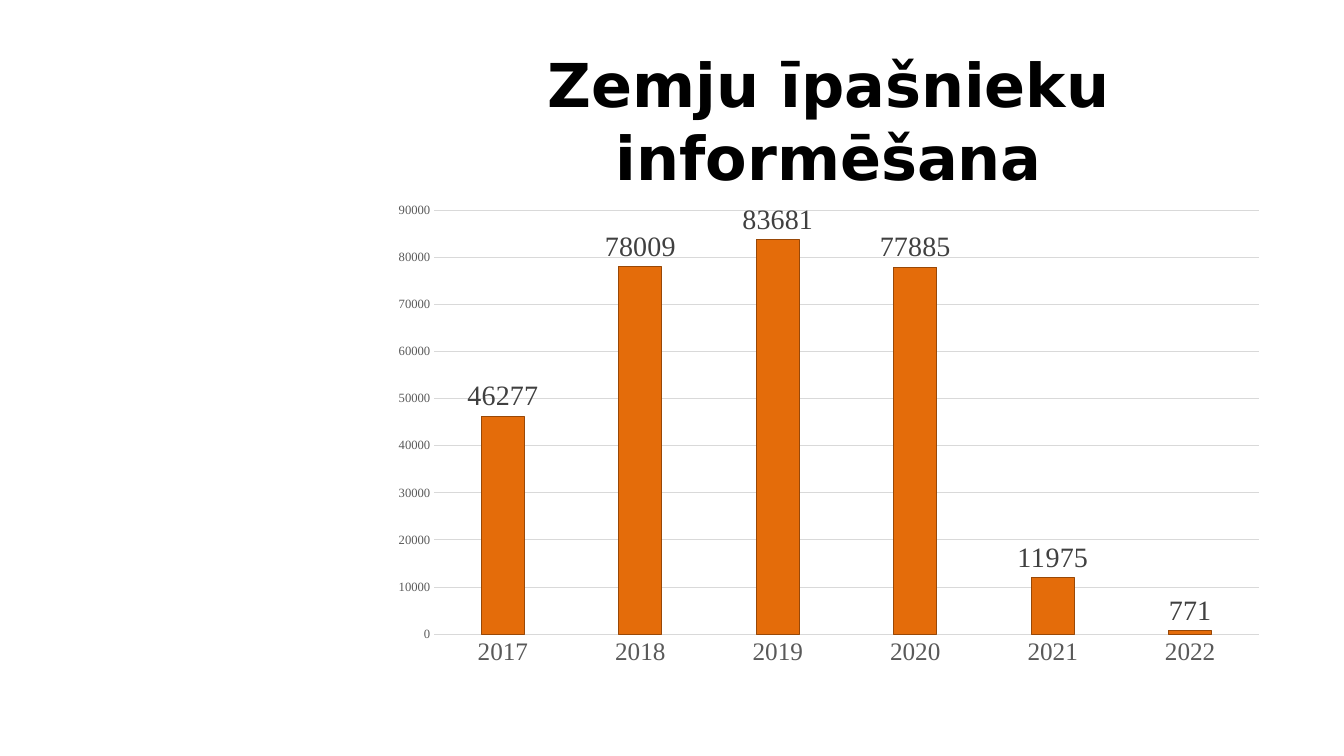
from dataclasses import dataclass

from pptx import Presentation
from pptx.chart.data import CategoryChartData
from pptx.dml.color import RGBColor
from pptx.enum.chart import XL_CHART_TYPE, XL_LABEL_POSITION, XL_TICK_MARK
from pptx.enum.text import MSO_ANCHOR, MSO_AUTO_SIZE, PP_ALIGN
from pptx.util import Inches, Pt


@dataclass(frozen=True)
class Theme:
    title_font: str = "DejaVu Sans"
    chart_font: str = "Times New Roman"
    title_size: float = 43.2
    label_size: int = 20
    category_size: int = 18
    chart_size: int = 10
    value_size: int = 9
    line_width: float = 0.75
    black: str = "000000"
    label: str = "404040"
    axis: str = "595959"
    grid: str = "D9D9D9"
    bar: str = "E46C0A"
    bar_edge: str = "984807"


class SlideBuilder:
    COLUMNS, ROWS = 120, 72

    def __init__(self, prs, theme):
        self.theme = theme
        self.column = prs.slide_width / self.COLUMNS
        self.row = prs.slide_height / self.ROWS
        self.slide = prs.slides.add_slide(prs.slide_layouts[5])

    def box(self, col, row, cols, rows):
        return (int(col * self.column), int(row * self.row),
                int(cols * self.column), int(rows * self.row))

    def style_font(self, font, name, size, color, bold=False):
        font.name = name
        font.size = Pt(size)
        font.bold = bold
        font.color.rgb = RGBColor.from_string(color)

    def style_line(self, line, color):
        line.color.rgb = RGBColor.from_string(color)
        line.width = Pt(self.theme.line_width)

    def title(self, text, *cells):
        t = self.theme
        s = self.slide.shapes.title
        s.left, s.top, s.width, s.height = self.box(*cells)
        tf = s.text_frame
        tf.word_wrap = True
        tf.auto_size = MSO_AUTO_SIZE.NONE
        tf.vertical_anchor = MSO_ANCHOR.TOP
        tf.margin_left = tf.margin_right = Inches(0.1)
        tf.margin_top = tf.margin_bottom = Inches(0.05)
        p = tf.paragraphs[0]
        p.alignment = PP_ALIGN.CENTER
        r = p.add_run()
        r.text = text
        self.style_font(r.font, t.title_font, t.title_size, t.black, True)

    def axis(self, axis, size):
        axis.major_tick_mark = axis.minor_tick_mark = XL_TICK_MARK.NONE
        self.style_font(axis.tick_labels.font, self.theme.chart_font, size, self.theme.axis)

    def column_chart(self, name, values, top, step, *cells):
        t = self.theme
        data = CategoryChartData()
        data.categories = list(values)
        data.add_series(name, list(values.values()))
        chart = self.slide.shapes.add_chart(
            XL_CHART_TYPE.COLUMN_CLUSTERED, *self.box(*cells), data).chart
        chart.has_legend = chart.has_title = False
        self.style_font(chart.font, t.chart_font, t.chart_size, t.black)

        self.axis(chart.category_axis, t.category_size)
        self.style_line(chart.category_axis.format.line, t.grid)
        axis = chart.value_axis
        self.axis(axis, t.value_size)
        axis.format.line.fill.background()
        axis.minimum_scale, axis.maximum_scale, axis.major_unit = 0, top, step
        self.style_line(axis.major_gridlines.format.line, t.grid)

        plot = chart.plots[0]
        plot.gap_width, plot.overlap = 219, -27
        plot.vary_by_categories = False
        series = plot.series[0]
        series.format.fill.solid()
        series.format.fill.fore_color.rgb = RGBColor.from_string(t.bar)
        self.style_line(series.format.line, t.bar_edge)
        labels = series.data_labels
        labels.show_value = True
        labels.position = XL_LABEL_POSITION.OUTSIDE_END
        self.style_font(labels.font, t.chart_font, t.label_size, t.label)


def main():
    prs = Presentation()
    prs.slide_width, prs.slide_height = Inches(13.33), Inches(7.5)
    page = SlideBuilder(prs, Theme())
    page.title("Zemju īpašnieku informēšana", 34, 4, 80, 10.85)
    informed = {"2017": 46277, "2018": 78009, "2019": 83681,
                "2020": 77885, "2021": 11975, "2022": 771}
    page.column_chart("Series 1", informed, 90000, 10000, 34, 18.4, 80, 45.9)
    prs.save("out.pptx")


if __name__ == "__main__":
    main()
